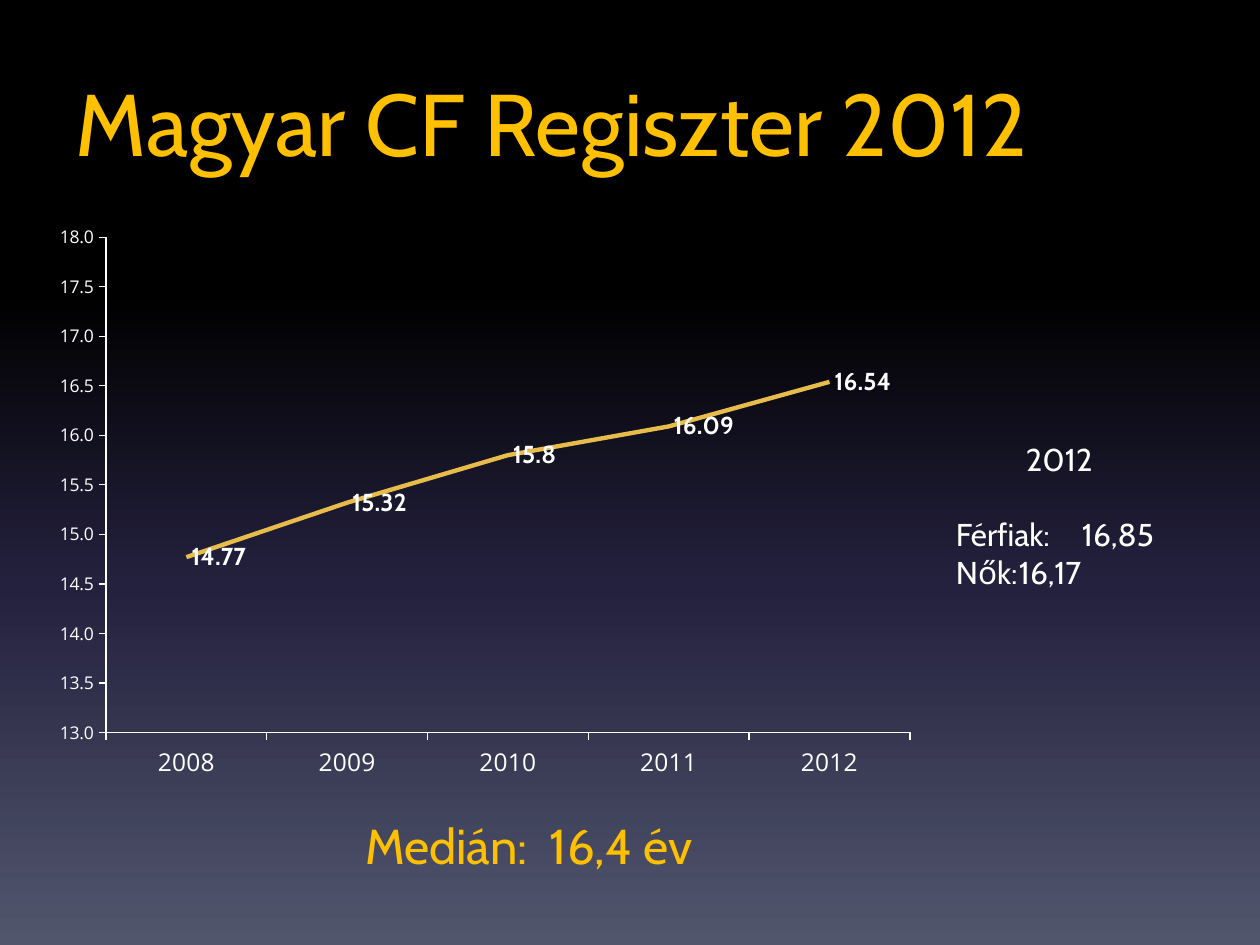
import lxml.etree
import pptx
import pptx.chart.data
import pptx.dml.color
import pptx.enum.chart
import pptx.enum.text
import pptx.oxml
import pptx.oxml.ns
import pptx.util
from pptx.util import Cm, Pt

COLORS = {"title": "FFC000", "text": "FFFFFF", "line": "E8BC4A"}
BACKGROUND_STOPS = [(0, "000000"), (31, "000000"), (62, "24213E"), (100, "51566D")]


def rgb(name):
    return pptx.dml.color.RGBColor.from_string(COLORS[name])


def format_text(text_frame, size, color):
    for paragraph in text_frame.paragraphs:
        for run in paragraph.runs:
            run.font.name = "Cabin"
            run.font.size = Pt(size)
            run.font.color.rgb = rgb(color)


presentation = pptx.Presentation()
presentation.slide_width = Cm(25.4)
presentation.slide_height = Cm(19.05)
slide = presentation.slides.add_slide(presentation.slide_layouts[5])

# Background: four-stop gradient from top to bottom
fill = slide.background.fill
fill.gradient()
fill.gradient_angle = 270
stop_list = slide.element.find(".//" + pptx.oxml.ns.qn("a:gsLst"))
for stop in list(stop_list):
    stop_list.remove(stop)
for position, color in BACKGROUND_STOPS:
    stop = lxml.etree.SubElement(stop_list, pptx.oxml.ns.qn("a:gs"), pos=str(position * 1000))
    lxml.etree.SubElement(stop, pptx.oxml.ns.qn("a:srgbClr"), val=color)

# Title
title = slide.shapes.title
title.left, title.top, title.width, title.height = Cm(1.27), Cm(1.27), Cm(22.86), Cm(3.18)
title.text_frame.text = "Magyar CF Regiszter 2012"
title.text_frame.vertical_anchor = pptx.enum.text.MSO_ANCHOR.TOP
title.text_frame.paragraphs[0].alignment = pptx.enum.text.PP_ALIGN.LEFT
format_text(title.text_frame, 50, "title")

# Median and the 2012 values by sex
median = slide.shapes.add_textbox(Cm(7.11), Cm(16.31), Cm(7.9), Cm(1.45))
median.text_frame.text = "Medián:  16,4 év"
format_text(median.text_frame, 28, "title")

by_sex = slide.shapes.add_textbox(Cm(19.02), Cm(8.74), Cm(4.67), Cm(3.33))
by_sex.text_frame.text = "2012\nFérfiak:\t16,85\nNők:\t16,17"
heading = by_sex.text_frame.paragraphs[0]
heading.alignment = pptx.enum.text.PP_ALIGN.CENTER
heading.space_after = Pt(21.6)
format_text(by_sex.text_frame, 18, "text")

for box in (median, by_sex):
    box.text_frame.word_wrap = False
    box.text_frame.auto_size = pptx.enum.text.MSO_AUTO_SIZE.SHAPE_TO_FIT_TEXT

# Line chart
chart_data = pptx.chart.data.CategoryChartData(number_format="General")
chart_data.categories = [2008, 2009, 2010, 2011, 2012]
chart_data.add_series("Series 1", [14.77, 15.32, 15.8, 16.09, 16.54])
chart = slide.shapes.add_chart(
    pptx.enum.chart.XL_CHART_TYPE.LINE, Cm(0.89), Cm(4.32), Cm(17.81), Cm(11.61), chart_data
).chart
chart.has_legend = False
chart.has_title = False
chart.font.name = "Cabin"
chart.font.size = Pt(10)
chart.font.color.rgb = rgb("text")

for axis, size in ((chart.category_axis, 14), (chart.value_axis, 10)):
    axis.has_major_gridlines = False
    axis.major_tick_mark = pptx.enum.chart.XL_TICK_MARK.OUTSIDE
    axis.minor_tick_mark = pptx.enum.chart.XL_TICK_MARK.NONE
    axis.format.line.color.rgb = rgb("text")
    axis.format.line.width = Pt(0.75)
    axis.tick_labels.font.name = "Open Sans"
    axis.tick_labels.font.size = Pt(size)
    axis.tick_labels.font.color.rgb = rgb("text")

value_axis = chart.value_axis
value_axis.minimum_scale = 13
value_axis.maximum_scale = 18
value_axis.major_unit = 0.5
value_axis.tick_labels.number_format = "0.0"
value_axis.tick_labels.number_format_is_linked = False

plot = chart.plots[0]
plot.vary_by_categories = False
series = plot.series[0]
series.smooth = False
series.marker.style = pptx.enum.chart.XL_MARKER_STYLE.NONE
series.format.line.color.rgb = rgb("line")
series.format.line.width = Pt(2.5)
labels = series.data_labels
labels.show_value = True
labels.position = pptx.enum.chart.XL_LABEL_POSITION.RIGHT
labels.font.name = "Cabin"
labels.font.size = Pt(14)
labels.font.bold = True
labels.font.color.rgb = rgb("text")

# Fixed inner plot area, as fractions of the chart
plot_area = chart.element.find(".//" + pptx.oxml.ns.qn("c:plotArea"))
for old_layout in plot_area.findall(pptx.oxml.ns.qn("c:layout")):
    plot_area.remove(old_layout)
layout = pptx.oxml.parse_xml(
    f'<c:layout {pptx.oxml.ns.nsdecls("c")}><c:manualLayout><c:layoutTarget val="inner"/>'
    '<c:xMode val="edge"/><c:yMode val="edge"/><c:x val="0.07"/><c:y val="0.04"/>'
    '<c:w val="0.91"/><c:h val="0.86"/></c:manualLayout></c:layout>'
)
plot_area.insert(0, layout)

presentation.save("out.pptx")
